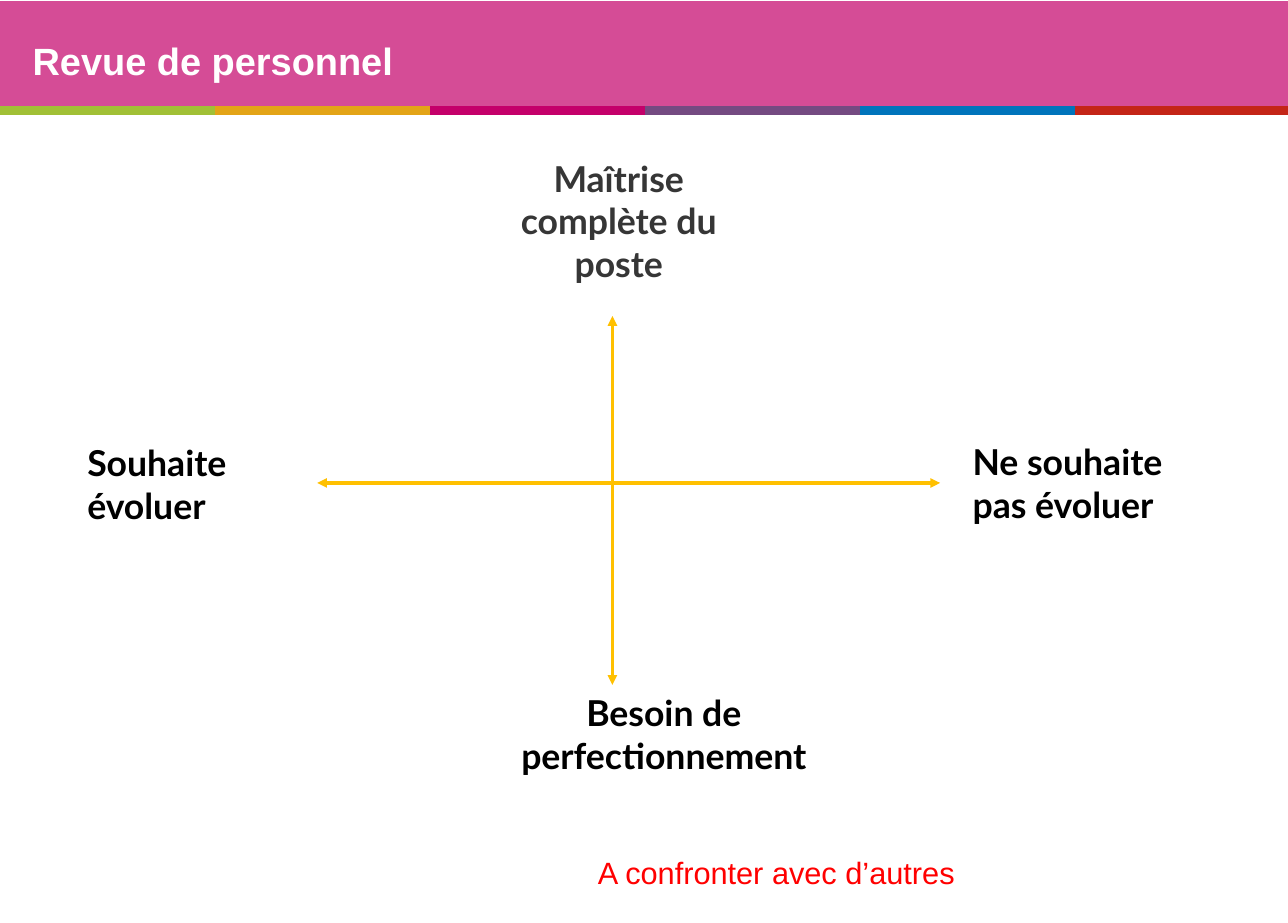
from lxml import etree
from pptx import Presentation
from pptx.dml.color import RGBColor
from pptx.enum.shapes import MSO_CONNECTOR, MSO_SHAPE
from pptx.enum.text import MSO_ANCHOR, PP_ALIGN
from pptx.oxml.ns import qn
from pptx.util import Pt

STRAIGHT = MSO_CONNECTOR.STRAIGHT
RECT = MSO_SHAPE.RECTANGLE
LEFT, CENTER = PP_ALIGN.LEFT, PP_ALIGN.CENTER
TOP, MIDDLE = MSO_ANCHOR.TOP, MSO_ANCHOR.MIDDLE

WIDTH, HEIGHT = 795, 569.5
STRIPE_WIDTH = 132.72
COLORS = {
    "green": "A1C036", "orange": "E3A417", "pink": "C4006A",
    "purple": "744A81", "blue": "0074BB", "red": "C42517",
    "axis": "FFC000", "grey": "363636", "black": "000000",
    "white": "FFFFFF", "note": "FF0000",
}
STRIPES = ["green", "orange", "pink", "purple", "blue", "red"]


class SlideBuilder:
    """Draws styled elements on one slide, with lengths in points."""

    def __init__(self, slide):
        self.slide = slide

    def color(self, name):
        return RGBColor.from_string(COLORS[name])

    def band(self, x, y, w, h, color, opacity):
        sp = self.slide.shapes.add_shape(RECT, Pt(x), Pt(y), Pt(w), Pt(h))
        sp.shadow.inherit = False
        sp.fill.solid()
        sp.fill.fore_color.rgb = self.color(color)
        sp.line.fill.background()
        clr = sp.fill._xPr.find(qn("a:solidFill"))[0]
        etree.SubElement(clr, qn("a:alpha"), val=str(opacity * 1000))

    def line(self, x1, y1, x2, y2, color, weight, arrows=False):
        cxn = self.slide.shapes.add_connector(
            STRAIGHT, Pt(x1), Pt(y1), Pt(x2), Pt(y2))
        cxn.line.color.rgb = self.color(color)
        cxn.line.width = Pt(weight)
        if arrows:
            ln = cxn.line._get_or_add_ln()
            for end in ("a:headEnd", "a:tailEnd"):
                etree.SubElement(ln, qn(end), type="triangle")
        etree.SubElement(cxn._element.spPr, qn("a:effectLst"))

    def text(self, x, y, w, h, text, color, size=22, font="Lato", bold=True,
             align=LEFT, anchor=TOP, wrap=True):
        tf = self.slide.shapes.add_textbox(Pt(x), Pt(y), Pt(w), Pt(h)).text_frame
        tf.word_wrap = wrap
        tf.vertical_anchor = anchor
        p = tf.paragraphs[0]
        p.text = text
        p.alignment = align
        p.font.name = font
        p.font.size = Pt(size)
        p.font.bold = bold
        p.font.color.rgb = self.color(color)


def main():
    prs = Presentation()
    prs.slide_width, prs.slide_height = Pt(WIDTH), Pt(HEIGHT)
    s = SlideBuilder(prs.slides.add_slide(prs.slide_layouts[6]))

    # Header band, stripes and title
    s.band(0, 0.7, 6 * STRIPE_WIDTH, 65.5, "pink", 70)
    for i, color in enumerate(STRIPES):
        x = i * STRIPE_WIDTH
        s.line(x, 68.4, x + STRIPE_WIDTH, 68.4, color, 5.67)
    s.text(13, 20, 716, 34, "Revue de personnel", "white", 23.4, "Arial",
           anchor=MIDDLE)

    # Axes
    s.line(378, 195, 378, 422.6, "axis", 2, arrows=True)
    s.line(580.3, 298, 195.8, 298, "axis", 2, arrows=True)

    # Axis labels
    s.text(302.4, 93, 159, 87, "Maîtrise complète du poste", "grey",
           align=CENTER)
    s.text(309, 422.6, 201.6, 101, "Besoin de perfectionnement", "black",
           align=CENTER)
    s.text(593.3, 267.8, 160.5, 60.5, "Ne souhaite pas évoluer", "black")
    s.text(46.8, 268.6, 164, 60.5, "Souhaite\vévoluer", "black")

    # Closing note
    s.text(362, 523.4, 238.3, 30, "A confronter avec d’autres", "note", 19,
           "Arial", bold=False, wrap=False)

    prs.save("out.pptx")


if __name__ == "__main__":
    main()
